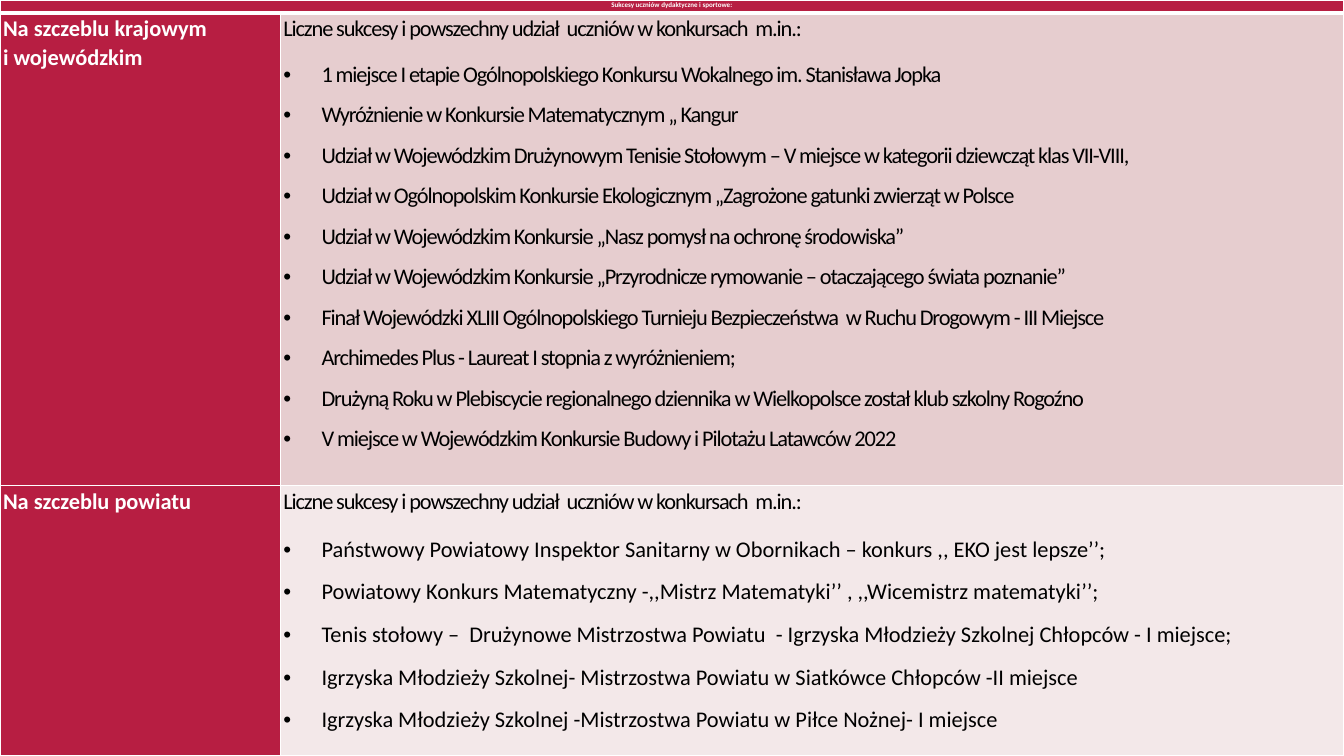
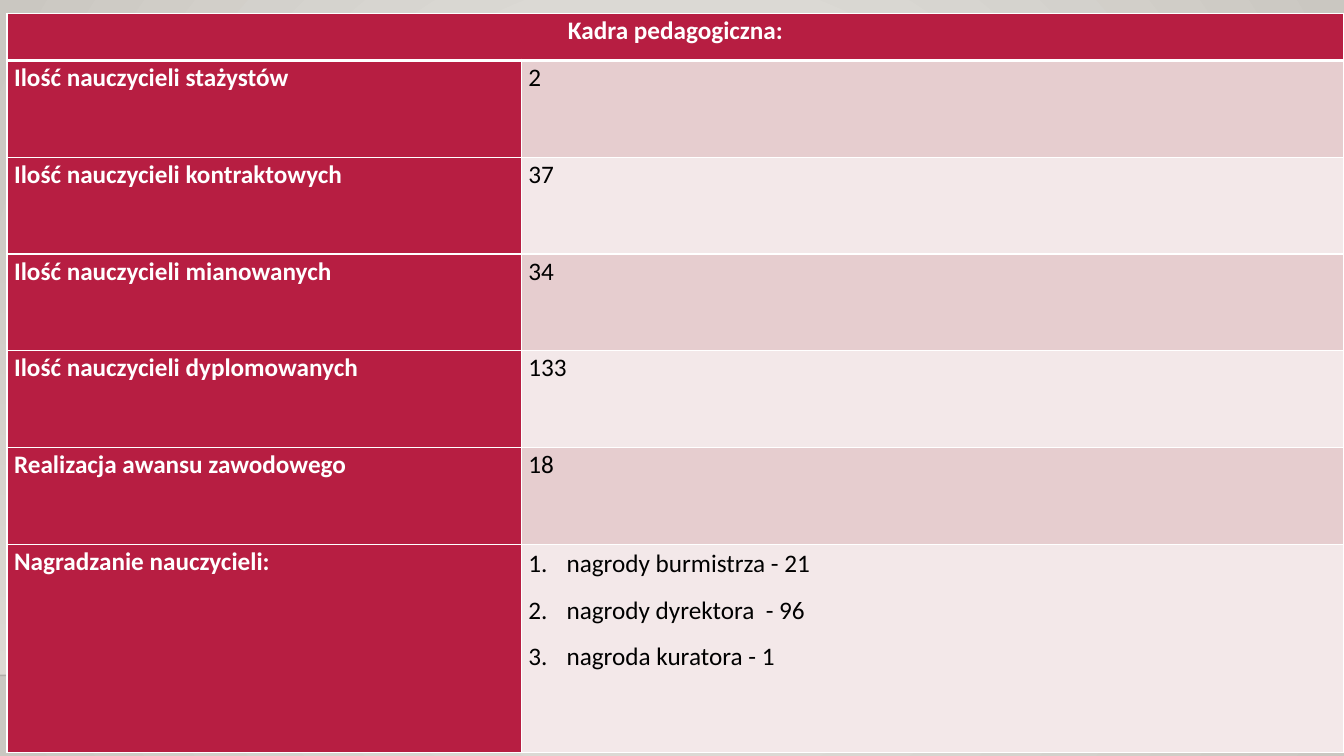
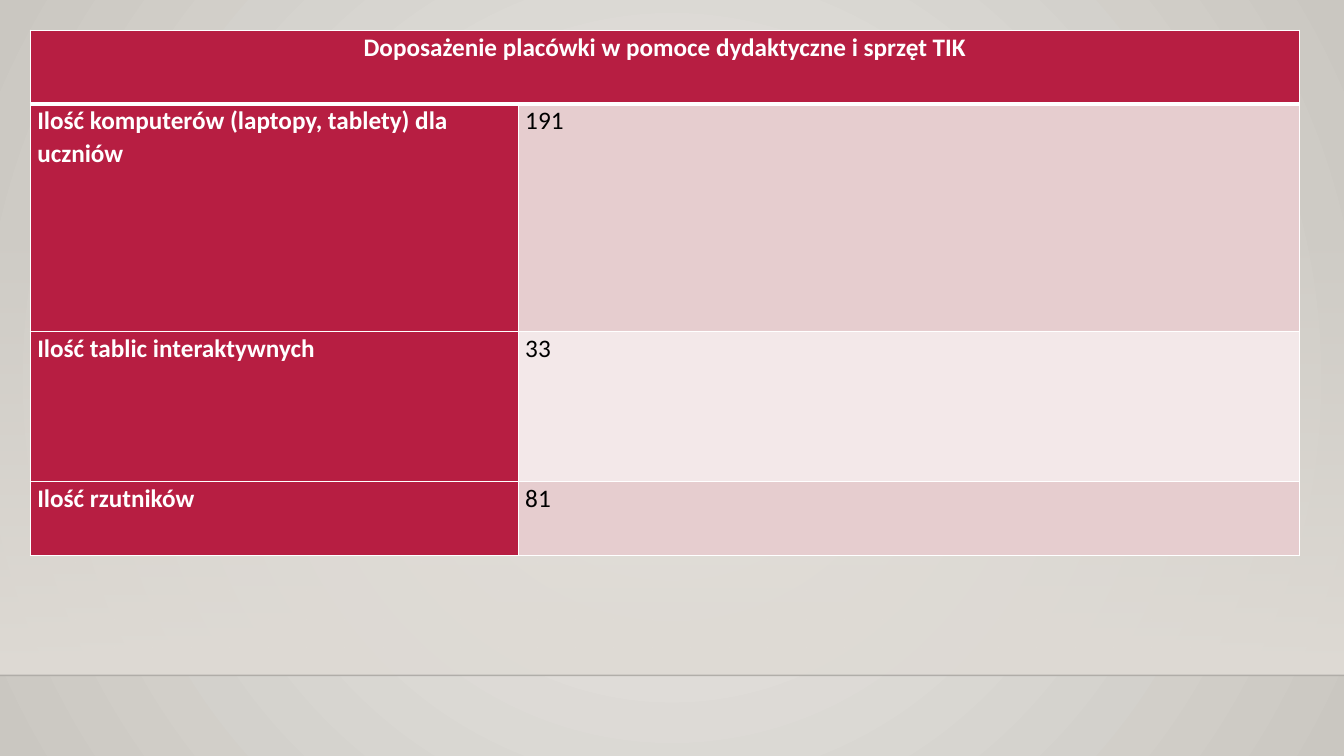
from copy import deepcopy

from pptx import Presentation
from pptx import util as u
from pptx.dml.color import RGBColor
from pptx.enum import shapes, text
from pptx.oxml import parse_xml
from pptx.oxml.ns import nsdecls, qn

COLORS = {
    "white": "FFFFFF",
    "black": "000000",
    "crimson": "B71E42",
    "band_dark": "E6CDCF",
    "band_light": "F3E8E9",
    "glow": "ECEAE7",
    "edge": "CAC7C1",
    "floor": "DFDBD5",
}
FONT = "Calibri"
CENTER_GLOW = '<a:path path="circle"><a:fillToRect l="50000" t="50000" r="50000" b="50000"/></a:path>'
DOWNWARD = '<a:lin ang="5400000" scaled="0"/>'
DOT = '<a:buChar {} char="•"/>'
NUMBER = '<a:buAutoNum {} type="arabicPeriod"/>'
CONTESTS = "Liczne sukcesy i powszechny udział  uczniów w konkursach  m.in.:"

NATIONAL = [
    "1 miejsce I etapie Ogólnopolskiego Konkursu Wokalnego im. Stanisława Jopka",
    "Wyróżnienie w Konkursie Matematycznym „ Kangur",
    "Udział w Wojewódzkim Drużynowym Tenisie Stołowym – V miejsce w kategorii dziewcząt klas VII-VIII,",
    "Udział w Ogólnopolskim Konkursie Ekologicznym „Zagrożone gatunki zwierząt w Polsce",
    "Udział w Wojewódzkim Konkursie „Nasz pomysł na ochronę środowiska”",
    "Udział w Wojewódzkim Konkursie „Przyrodnicze rymowanie – otaczającego świata poznanie”",
    "Finał Wojewódzki XLIII Ogólnopolskiego Turnieju Bezpieczeństwa  w Ruchu Drogowym - III Miejsce",
    "Archimedes Plus - Laureat I stopnia z wyróżnieniem;",
    "Drużyną Roku w Plebiscycie regionalnego dziennika w Wielkopolsce został klub szkolny Rogoźno",
    "V miejsce w Wojewódzkim Konkursie Budowy i Pilotażu Latawców 2022",
]
COUNTY = [
    "Państwowy Powiatowy Inspektor Sanitarny w Obornikach – konkurs ,, EKO jest lepsze’’;",
    "Powiatowy Konkurs Matematyczny -,,Mistrz Matematyki’’ , ,,Wicemistrz matematyki’’;",
    "Tenis stołowy –  Drużynowe Mistrzostwa Powiatu  - Igrzyska Młodzieży Szkolnej Chłopców - I miejsce;",
    "Igrzyska Młodzieży Szkolnej- Mistrzostwa Powiatu w Siatkówce Chłopców -II miejsce",
    "Igrzyska Młodzieży Szkolnej -Mistrzostwa Powiatu w Piłce Nożnej- I miejsce",
]
AWARDS = ["nagrody burmistrza - 21", "nagrody dyrektora  - 96", "nagroda kuratora - 1"]


def rgb(name):
    return RGBColor.from_string(COLORS[name])


def use_gradient(element, stops, direction):
    """Replace the first solid fill in element by a gradient of (position, colour, opacity) stops."""
    marks = "".join(
        f'<a:gs pos="{position * 1000}"><a:srgbClr val="{COLORS[color]}">'
        f'<a:alpha val="{opacity * 1000}"/></a:srgbClr></a:gs>'
        for position, color, opacity in stops)
    solid = next(element.iter(qn("a:solidFill")))
    solid.getparent().replace(solid, parse_xml(
        f'<a:gradFill {nsdecls("a")} rotWithShape="1"><a:gsLst>{marks}</a:gsLst>{direction}</a:gradFill>'))


def dress_master(deck, page):
    """Give the master its background, floor band and floor line, drawn on page first and then moved."""
    master = deck.slide_master
    master.background.fill.solid()
    master.background.fill.fore_color.rgb = rgb("glow")
    use_gradient(master.element, [(0, "glow", 100), (100, "edge", 100)], CENTER_GLOW)

    floor_y = u.Inches(6.7)
    band_top = u.Inches(2.21)
    band = page.shapes.add_shape(
        shapes.MSO_SHAPE.RECTANGLE, 0, band_top, deck.slide_width, floor_y - band_top)
    band.shadow.inherit = False
    band.line.fill.background()
    band.fill.solid()
    use_gradient(band.element, [(0, "floor", 0), (100, "floor", 100)], DOWNWARD)

    line = page.shapes.add_connector(
        shapes.MSO_CONNECTOR.STRAIGHT, 0, floor_y, deck.slide_width, floor_y)
    line.line.width = u.Pt(1)
    line.line.color.rgb = rgb("black")
    tint = next(line.element.iter(qn("a:srgbClr")))
    tint.append(parse_xml(f'<a:alpha {nsdecls("a")} val="20000"/>'))
    line.element.spPr.append(parse_xml(f'<a:effectLst {nsdecls("a")}/>'))

    for index, shape in enumerate((band, line), start=2):
        master.shapes.element.insert(index, shape.element)


def write(para, content, size=18, color="black", bold=False, align=None,
          spacing=1.07, after=8, bullet=None, tracking=0):
    para.text = content
    para.alignment = align
    para.line_spacing = spacing
    para.space_after = u.Pt(after)
    if bullet:
        props = para._p.get_or_add_pPr()
        props.set("marL", str(u.Inches(0.38)))
        props.set("indent", str(-u.Inches(0.38)))
        props.append(parse_xml(f'<a:buFont {nsdecls("a")} typeface="Arial"/>'))
        props.append(parse_xml(bullet.format(nsdecls("a"))))
    for span in para.runs:
        span.font.size = u.Pt(size)
        span.font.name = FONT
        span.font.bold = bold
        span.font.color.rgb = rgb(color)
        if tracking:
            span.font._element.set("spc", str(tracking))
    for line_break in para._p.findall(qn("a:br")):
        line_break.append(deepcopy(para.runs[0].font._element))


def set_borders(cell, bottom=1):
    sides = [("L", 1), ("R", 1), ("T", 1), ("B", bottom)]
    for index, (side, width) in enumerate(sides):
        cell._tc.get_or_add_tcPr().insert(index, parse_xml(
            f'<a:ln{side} {nsdecls("a")} w="{u.Pt(width)}"><a:solidFill>'
            f'<a:srgbClr val="{COLORS["white"]}"/></a:solidFill></a:ln{side}>'))


def fill_cell(cell, fill, items, inset, bottom=1, **style):
    """Style a cell; items are strings or (string, format) pairs, one for each paragraph."""
    cell.fill.solid()
    cell.fill.fore_color.rgb = rgb(fill)
    set_borders(cell, bottom)
    cell.margin_left = cell.margin_right = u.Inches(inset)
    cell.margin_top = cell.margin_bottom = 0
    for index, item in enumerate(items):
        content, extra = (item, {}) if isinstance(item, str) else item
        frame = cell.text_frame
        para = frame.add_paragraph() if index else frame.paragraphs[0]
        write(para, content, **{**style, **extra})


def add_fact_table(page, place, columns, heights, title, rows, size=18, title_size=18, inset=0.07):
    """Table with a title row across both columns, then (label, items) rows."""
    left, top = place
    frame = page.shapes.add_table(
        len(heights), 2, u.Inches(left), u.Inches(top),
        u.Inches(sum(columns)), u.Inches(sum(heights)))
    table = frame.table
    for column, width in zip(table.columns, columns):
        column.width = u.Inches(width)
    for row, height in zip(table.rows, heights):
        row.height = u.Inches(height)

    heading = {"color": "white", "bold": True}
    table.cell(0, 0).merge(table.cell(0, 1))
    fill_cell(table.cell(0, 0), "crimson", [title], inset, bottom=3,
              size=title_size, align=text.PP_ALIGN.CENTER, **heading)
    fill_cell(table.cell(0, 1), "crimson", [], inset, bottom=3)
    for index, (label, items) in enumerate(rows, start=1):
        band = "band_dark" if index % 2 else "band_light"
        fill_cell(table.cell(index, 0), "crimson", [label], inset, size=size, **heading)
        fill_cell(table.cell(index, 1), band, items, inset, size=size)


def bulleted(items, **style):
    return [(item, style) for item in items]


def main():
    deck = Presentation()
    deck.slide_width, deck.slide_height = u.Inches(13.33), u.Inches(7.5)
    blank = deck.slide_layouts[6]
    successes, staff, equipment = [deck.slides.add_slide(blank) for _ in range(3)]
    dress_master(deck, successes)

    intro = (CONTESTS, {"after": 12, "tracking": -80})
    add_fact_table(
        successes, (0, 0), [2.78, 10.55], [0.13, 4.69, 2.68],
        "Sukcesy uczniów dydaktyczne i sportowe:",
        [("Na szczeblu krajowym \vi wojewódzkim",
          [intro] + bulleted(NATIONAL, bullet=DOT, tracking=-80)),
         ("Na szczeblu powiatu",
          [intro] + bulleted(COUNTY, bullet=DOT, spacing=1.15))],
        size=16, title_size=5, inset=0.03)

    add_fact_table(
        staff, (0.07, 0.13), [5.1, 8.16], [0.47] + [0.96] * 5 + [2.07],
        "Kadra pedagogiczna:",
        [("Ilość nauczycieli stażystów", ["2"]),
         ("Ilość nauczycieli kontraktowych", ["37"]),
         ("Ilość nauczycieli mianowanych", ["34"]),
         ("Ilość nauczycieli dyplomowanych", ["133"]),
         ("Realizacja awansu zawodowego", ["18"]),
         ("Nagradzanie nauczycieli:", bulleted(AWARDS, bullet=NUMBER, spacing=1.15))])

    add_fact_table(
        equipment, (0.3, 0.3), [4.84, 7.75], [0.73, 2.26, 1.49, 0.73],
        "Doposażenie placówki w pomoce dydaktyczne i sprzęt TIK",
        [("Ilość komputerów (laptopy, tablety) dla uczniów", ["191"]),
         ("Ilość tablic interaktywnych", ["33"]),
         ("Ilość rzutników", ["81"])])

    deck.save("out.pptx")


if __name__ == "__main__":
    main()
